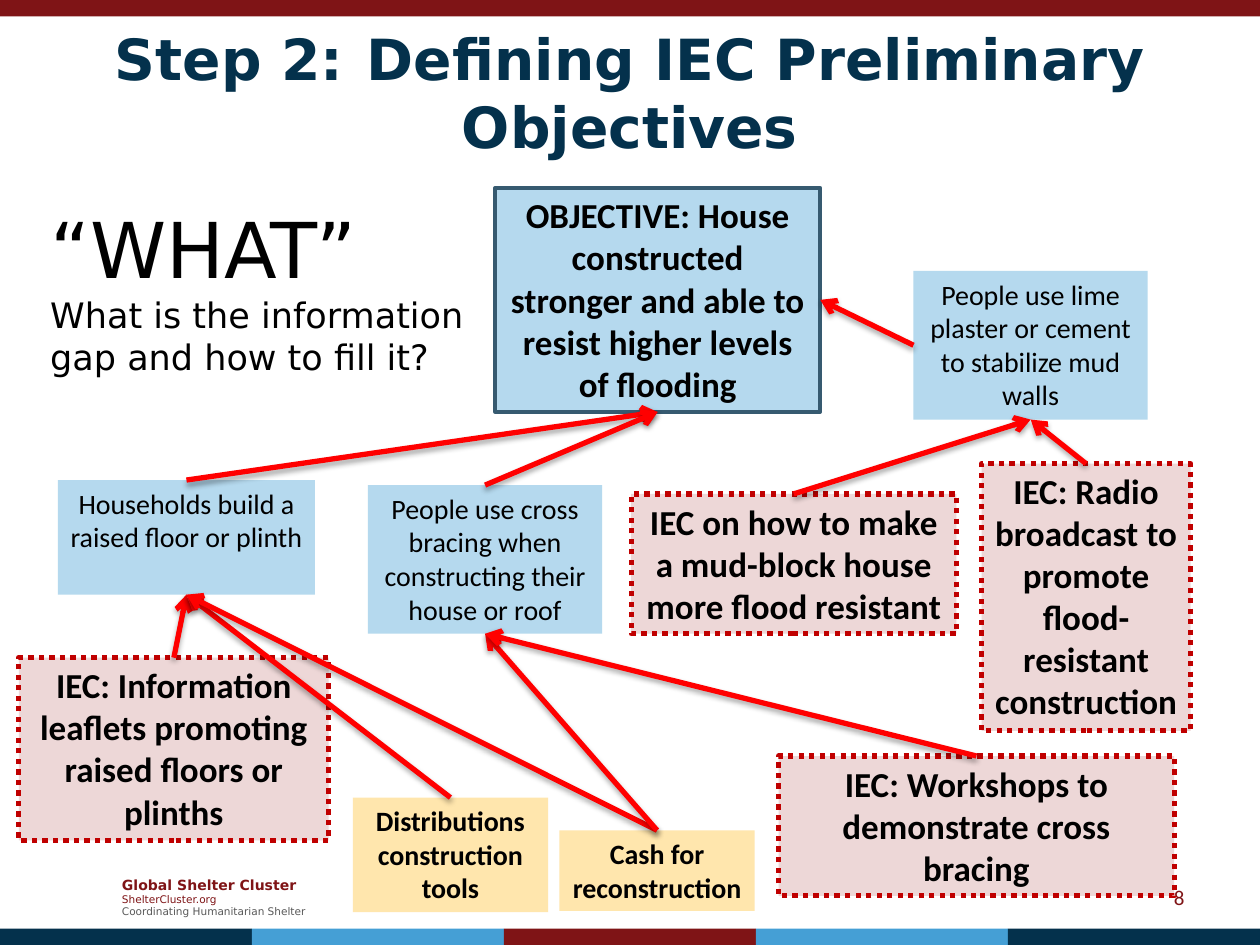
from lxml import etree
from pptx import Presentation
from pptx.dml.color import RGBColor
from pptx.enum.dml import MSO_LINE
from pptx.enum.shapes import MSO_CONNECTOR, MSO_SHAPE
from pptx.enum.text import MSO_ANCHOR, MSO_AUTO_SIZE, PP_ALIGN
from pptx.oxml import parse_xml
from pptx.oxml.ns import nsdecls, qn
from pptx.util import Inches, Pt

RECTANGLE = MSO_SHAPE.RECTANGLE
STRAIGHT = MSO_CONNECTOR.STRAIGHT
DOTTED = MSO_LINE.ROUND_DOT
MIDDLE = MSO_ANCHOR.MIDDLE
FIXED_SIZE = MSO_AUTO_SIZE.NONE
LEFT, CENTER, RIGHT = PP_ALIGN.LEFT, PP_ALIGN.CENTER, PP_ALIGN.RIGHT

MAROON = RGBColor(0x7F, 0x14, 0x16)
NAVY = RGBColor(0x04, 0x31, 0x4C)
SKY = RGBColor(0x45, 0x9F, 0xD5)
GREY = RGBColor(0x59, 0x59, 0x59)
BLACK = RGBColor(0, 0, 0)
PALE_BLUE = RGBColor(0xB5, 0xD9, 0xEE)
PALE_RED = RGBColor(0xED, 0xD7, 0xD7)
PALE_YELLOW = RGBColor(0xFF, 0xE6, 0xAD)
STEEL = RGBColor(0x36, 0x5A, 0x70)
DARK_RED = RGBColor(0xC0, 0, 0)
RED = RGBColor(0xFF, 0, 0)

HEADING_FONT, BOX_FONT = "DejaVu Sans", "Calibri"
SLIDE_WIDTH, SLIDE_HEIGHT = Inches(10), Inches(7.5)
COLUMNS, ROWS = 100, 75
TOP, SIDE_LEFT, BOTTOM, SIDE_RIGHT = range(4)

# role: fill, outline colour, outline width, dash, text size, bold
ROLES = {
    "objective": (PALE_BLUE, STEEL, 2, None, 20, True),
    "practice": (PALE_BLUE, None, 0, None, 16, False),
    "iec": (PALE_RED, DARK_RED, 3, DOTTED, 20, True),
    "support": (PALE_YELLOW, None, 0, None, 16, True),
}

# key: role, (column, row, columns wide, rows high), paragraphs
BOXES = {
    "leaflets": ("iec", (1.5, 52.2, 24.6, 14.5),
                 ["IEC: Information leaflets promoting raised floors or plinths"]),
    "tools": ("support", (28, 63.3, 15.5, 9.1), ["Distributions construction tools"]),
    "cash": ("support", (44.4, 65.9, 15.5, 6.4), ["Cash for reconstruction"]),
    "plinth": ("practice", (4.6, 38.1, 20.4, 9.1),
               ["Households build a raised floor or plinth"]),
    "bracing": ("practice", (29.2, 38.5, 18.6, 11.8),
                ["People use cross bracing when constructing their house or roof"]),
    "objective": ("objective", (39.3, 14.9, 25.8, 17.8),
                  ["OBJECTIVE: House constructed stronger and able to "
                   "resist higher levels of flooding"]),
    "mud block": ("iec", (50.1, 39.2, 25.8, 11.1),
                  ["IEC on how to make a mud-block house more flood resistant"]),
    "radio": ("iec", (77.9, 36.8, 16.6, 21.2),
              ["IEC: Radio broadcast to promote", "flood-resistant construction"]),
    "workshops": ("iec", (61.8, 60, 31.4, 11.1),
                  ["IEC: Workshops to demonstrate cross bracing"]),
    "plaster": ("practice", (72.5, 21.5, 18.6, 11.8),
                ["People use lime plaster or cement to stabilize mud walls"]),
}

UPWARD_LINKS = [
    ("leaflets", "plinth"), ("tools", "plinth"), ("cash", "plinth"),
    ("cash", "bracing"), ("workshops", "bracing"),
    ("plinth", "objective"), ("bracing", "objective"),
    ("mud block", "plaster"), ("radio", "plaster"),
]


def place(column, row, wide, high):
    """Turn grid units into left, top, width and height."""
    cell_width, cell_height = SLIDE_WIDTH / COLUMNS, SLIDE_HEIGHT / ROWS
    return (round(column * cell_width), round(row * cell_height),
            round(wide * cell_width), round(high * cell_height))


def write(frame, lines, align):
    """Fill a frame with paragraphs of (text, size, font, colour, bold)."""
    frame.word_wrap = True
    for index, (text, size, font, color, bold) in enumerate(lines):
        paragraph = frame.add_paragraph() if index else frame.paragraphs[0]
        paragraph.alignment = align
        run = paragraph.add_run()
        run.text = text
        run.font.size, run.font.name, run.font.bold = Pt(size), font, bold
        run.font.color.rgb = color


def add_rectangle(slide, area, fill):
    rectangle = slide.shapes.add_shape(RECTANGLE, *place(*area))
    rectangle.shadow.inherit = False
    rectangle.fill.solid()
    rectangle.fill.fore_color.rgb = fill
    rectangle.line.fill.background()
    return rectangle


def add_box(slide, role, area, paragraphs):
    fill, outline, width, dash, size, bold = ROLES[role]
    box = add_rectangle(slide, area, fill)
    if outline is not None:
        box.line.color.rgb = outline
        box.line.width = Pt(width)
        box.line.dash_style = dash
    box.text_frame.vertical_anchor = MSO_ANCHOR.TOP
    write(box.text_frame,
          [(text, size, BOX_FONT, BLACK, bold) for text in paragraphs], CENTER)
    return box


def add_label(slide, area, lines, align=LEFT, anchor=MSO_ANCHOR.TOP):
    label = slide.shapes.add_textbox(*place(*area))
    label.text_frame.vertical_anchor = anchor
    write(label.text_frame, lines, align)


def add_arrow(slide, source, source_side, target, target_side):
    arrow = slide.shapes.add_connector(STRAIGHT, 0, 0, 0, 0)
    arrow.begin_connect(source, source_side)
    arrow.end_connect(target, target_side)
    arrow.line.color.rgb = RED
    arrow.line.width = Pt(3)
    etree.SubElement(arrow.line._get_or_add_ln(), qn("a:tailEnd"), type="arrow")
    arrow._element.spPr.append(parse_xml(
        f'<a:effectLst {nsdecls("a")}>'
        '<a:outerShdw blurRad="40000" dist="23000" dir="5400000" rotWithShape="0">'
        '<a:srgbClr val="000000"><a:alpha val="35000"/></a:srgbClr>'
        '</a:outerShdw></a:effectLst>'))


def add_title(slide):
    title = slide.shapes.title
    title.left, title.top, title.width, title.height = place(5, 3.7, 90, 12.5)
    frame = title.text_frame
    frame.auto_size = FIXED_SIZE
    frame.vertical_anchor = MIDDLE
    frame.margin_bottom = Inches(0.58)
    write(frame, [("Step 2: \tDefining IEC Preliminary Objectives",
                   32.4, HEADING_FONT, NAVY, True)], CENTER)


def add_bands(slide):
    add_rectangle(slide, (0, 0, COLUMNS, 1.3), MAROON)
    colors = [NAVY, SKY, MAROON, SKY, NAVY]
    band_width = COLUMNS / len(colors)
    for index, color in enumerate(colors):
        add_rectangle(slide, (index * band_width, 73.7, band_width, 1.3), color)


def main():
    presentation = Presentation()
    presentation.slide_width, presentation.slide_height = SLIDE_WIDTH, SLIDE_HEIGHT
    slide = presentation.slides.add_slide(presentation.slide_layouts[5])

    add_bands(slide)
    add_title(slide)
    add_label(slide, (8.7, 69, 17.3, 4.4), [
        ("Global Shelter Cluster", 8, HEADING_FONT, MAROON, True),
        ("ShelterCluster.org", 6, HEADING_FONT, MAROON, False),
        ("Coordinating Humanitarian Shelter", 6, HEADING_FONT, GREY, False),
    ], anchor=MIDDLE)
    add_label(slide, (71.7, 69.2, 23.3, 4),
              [("8", 12, BOX_FONT, MAROON, False)], RIGHT, MIDDLE)
    add_label(slide, (3, 15.5, 35.2, 15.1), [
        ("“WHAT”", 44, HEADING_FONT, BLACK, False),
        ("What is the information gap and how to fill it?",
         20, HEADING_FONT, BLACK, False),
    ])

    boxes = {key: add_box(slide, *content) for key, content in BOXES.items()}
    for source, target in UPWARD_LINKS:
        add_arrow(slide, boxes[source], TOP, boxes[target], BOTTOM)
    add_arrow(slide, boxes["plaster"], SIDE_LEFT, boxes["objective"], SIDE_RIGHT)

    presentation.save("out.pptx")


if __name__ == "__main__":
    main()
